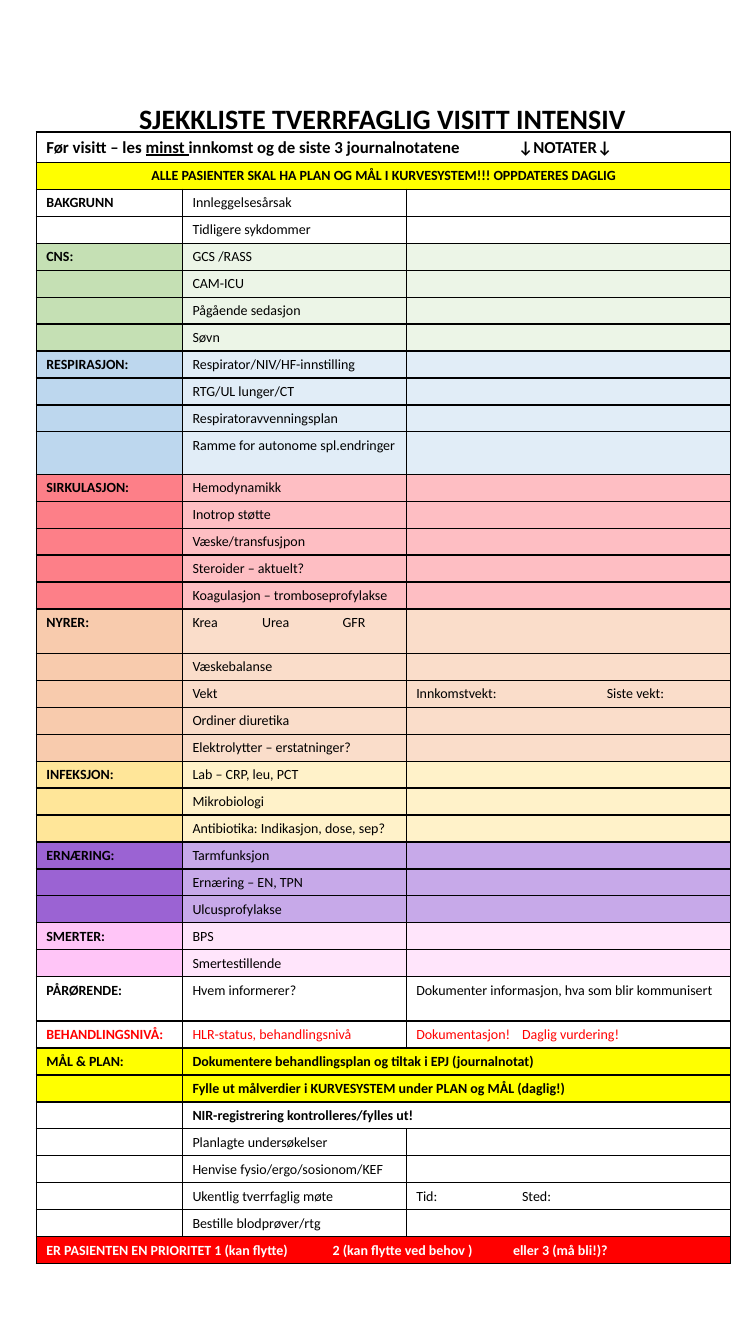
"""Builds a one-page checklist for the interdisciplinary intensive care round."""
from lxml import etree
from pptx import Presentation
from pptx.dml.color import RGBColor
from pptx.enum.text import MSO_ANCHOR, PP_ALIGN
from pptx.oxml.ns import qn
from pptx.util import Inches, Pt

COLORS = {
    "black": "000000", "white": "FFFFFF", "red": "FF0000", "yellow": "FFFF00",
    "green": "C5E0B4", "pale green": "ECF5E7", "blue": "BDD7EE", "pale blue": "E1EDF7",
    "coral": "FD7F88", "pale coral": "FEBEC3", "orange": "F8CBAD", "pale orange": "FADDCA",
    "gold": "FFE699", "pale gold": "FFF2C9", "purple": "9B63D3", "pale purple": "C7A9E9",
    "pink": "FFC5F7", "pale pink": "FFE5FB",
}
HEADING = [("Før visitt – les ", False), ("minst ", True),
           ("innkomst og de siste 3 journalnotatene\t↓NOTATER↓", False)]
REMINDER = "ALLE PASIENTER SKAL HA PLAN OG MÅL I KURVESYSTEM!!! OPPDATERES DAGLIG"
PRIORITY = "ER PASIENTEN EN PRIORITET 1 (kan flytte)\t2 (kan flytte ved behov )\teller 3 (må bli!)?"
SECTIONS = [
    ("BAKGRUNN", None, None, ["Innleggelsesårsak", "Tidligere sykdommer"]),
    ("CNS:", "green", "pale green", ["GCS /RASS", "CAM-ICU", "Pågående sedasjon", "Søvn"]),
    ("RESPIRASJON:", "blue", "pale blue",
     ["Respirator/NIV/HF-innstilling", "RTG/UL lunger/CT", "Respiratoravvenningsplan",
      "Ramme for autonome spl.endringer"]),
    ("SIRKULASJON:", "coral", "pale coral",
     ["Hemodynamikk", "Inotrop støtte", "Væske/transfusjpon", "Steroider – aktuelt?",
      "Koagulasjon – tromboseprofylakse"]),
    ("NYRER:", "orange", "pale orange",
     ["Krea\tUrea\tGFR", "Væskebalanse", "Vekt", "Ordiner diuretika",
      "Elektrolytter – erstatninger?"]),
    ("INFEKSJON:", "gold", "pale gold",
     ["Lab – CRP, leu, PCT", "Mikrobiologi", "Antibiotika: Indikasjon, dose, sep?"]),
    ("ERNÆRING:", "purple", "pale purple",
     ["Tarmfunksjon", "Ernæring – EN, TPN", "Ulcusprofylakse"]),
    ("SMERTER:", "pink", "pale pink", ["BPS", "Smertestillende"]),
    ("PÅRØRENDE:", "white", "white", ["Hvem informerer?"]),
    ("BEHANDLINGSNIVÅ:", None, None, ["HLR-status, behandlingsnivå"]),
    ("MÅL & PLAN:", "yellow", "yellow",
     ["Dokumentere behandlingsplan og tiltak i EPJ (journalnotat)",
      "Fylle ut målverdier i KURVESYSTEM under PLAN og MÅL (daglig!)"]),
    ("", None, None,
     ["NIR-registrering kontrolleres/fylles ut!", "Planlagte undersøkelser",
      "Henvise fysio/ergo/sosionom/KEF", "Ukentlig tverrfaglig møte",
      "Bestille blodprøver/rtg"]),
]
NOTES = {
    "Vekt": ("Innkomstvekt:\tSiste vekt:", [1.89]),
    "Hvem informerer?": ("Dokumenter informasjon, hva som blir kommunisert", []),
    "HLR-status, behandlingsnivå": ("Dokumentasjon!\tDaglig vurdering!", [1.05]),
    "Ukentlig tverrfaglig møte": ("Tid:\tSted:", [1.05]),
}
TALL_ROWS = {"Ramme for autonome spl.endringer": 0.42, "Krea\tUrea\tGFR": 0.44,
             "Hvem informerer?": 0.44}
ROW_COUNT = 3 + sum(len(items) for *_, items in SECTIONS)


def style(paragraph, size, bold=False, color="black", tabs=()):
    """Sets tab stops and font of a paragraph."""
    if tabs:
        stops = etree.SubElement(paragraph._p.get_or_add_pPr(), qn("a:tabLst"))
        for stop in tabs:
            etree.SubElement(stops, qn("a:tab"), pos=str(Inches(stop)), algn="l")
    if not paragraph.runs:
        etree.SubElement(paragraph._p, qn("a:endParaRPr"), sz=str(size * 100))
    font = paragraph.font
    font.name, font.size, font.bold = "Calibri", Pt(size), bold
    font.color.rgb = RGBColor.from_string(COLORS[color])


def fill_cell(cell, text, fill=None, size=10, **look):
    """Writes, fills and styles one table cell."""
    paragraph = cell.text_frame.paragraphs[0]
    for part, underlined in text if isinstance(text, list) else [(text, None)]:
        if part:
            run = paragraph.add_run()
            run.text = part
            run.font.underline = underlined
    style(paragraph, size, **look)
    if fill:
        cell.fill.solid()
        cell.fill.fore_color.rgb = RGBColor.from_string(COLORS[fill])
    else:
        cell.fill.background()


deck = Presentation()
deck.slide_width, deck.slide_height = Inches(7.5), Inches(13.33)
slide = deck.slides.add_slide(deck.slide_layouts[6])

title = slide.shapes.add_textbox(Inches(0.56), Inches(1.01), Inches(6.47), Inches(0.36)).text_frame
title.word_wrap = True
title.vertical_anchor = MSO_ANCHOR.MIDDLE
headline = title.paragraphs[0]
headline.text = "SJEKKLISTE TVERRFAGLIG VISITT INTENSIV"
headline.alignment = PP_ALIGN.CENTER
headline.line_spacing = 0.9
style(headline, 20, bold=True)

checklist = slide.shapes.add_table(
    ROW_COUNT, 3, Inches(0.36), Inches(1.31), Inches(6.89), Inches(10.87)).table
checklist.first_row = checklist.horz_banding = False
for column, width in zip(checklist.columns, (1.45, 2.22, 3.22)):
    column.width = Inches(width)
for row in checklist.rows:
    row.height = Inches(0.26)
checklist.rows[0].height = Inches(0.3)

banners = [
    (0, HEADING, "white", {"size": 12, "tabs": [4.68]}),
    (1, REMINDER, "yellow", {}),
    (ROW_COUNT - 1, PRIORITY, "red", {"color": "white", "tabs": [2.84, 4.63]}),
]
for index, text, fill, look in banners:
    banner = checklist.cell(index, 0)
    banner.merge(checklist.cell(index, 2))
    fill_cell(banner, text, fill, bold=True, **look)
checklist.cell(1, 0).text_frame.paragraphs[0].alignment = PP_ALIGN.CENTER

index = 2
for label, tint, pale, items in SECTIONS:
    color = "red" if label == "BEHANDLINGSNIVÅ:" else "black"
    for position, item in enumerate(items):
        topic, task, note = (checklist.cell(index, column) for column in range(3))
        fill_cell(topic, "" if position else label, tint, bold=True, color=color)
        wide = tint == "yellow" or item.startswith("NIR")
        fill_cell(task, item, pale, bold=wide, color=color,
                  tabs=[0.69, 1.49] if "\t" in item else [])
        if wide:
            task.merge(note)
        else:
            note_text, note_tabs = NOTES.get(item, ("", []))
            fill_cell(note, note_text, pale, color=color, tabs=note_tabs)
        if item in TALL_ROWS:
            checklist.rows[index].height = Inches(TALL_ROWS[item])
        index += 1

for cell in checklist.iter_cells():
    properties = cell._tc.get_or_add_tcPr()
    for order, side in enumerate(("lnL", "lnR", "lnT", "lnB")):
        border = etree.Element(qn("a:" + side), w=str(Pt(1)))
        solid = etree.SubElement(border, qn("a:solidFill"))
        etree.SubElement(solid, qn("a:srgbClr"), val=COLORS["black"])
        properties.insert(order, border)

deck.save("out.pptx")
